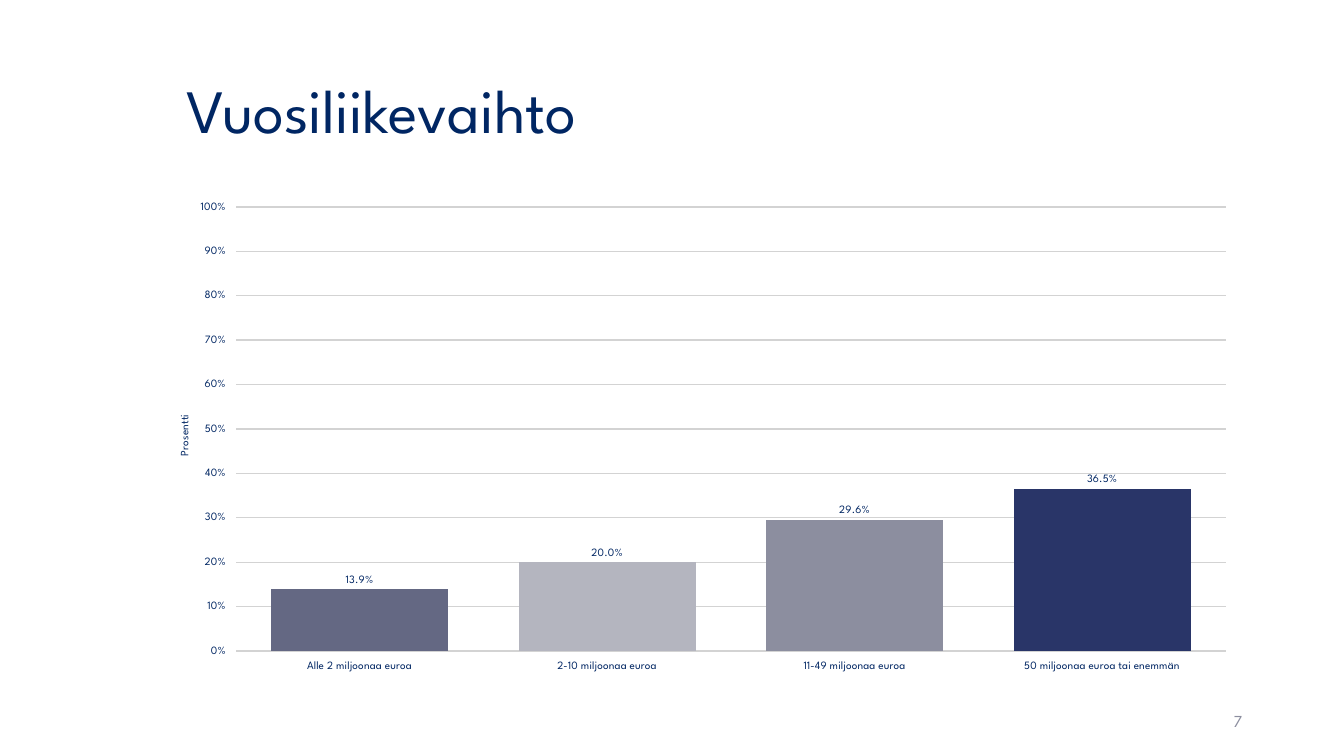
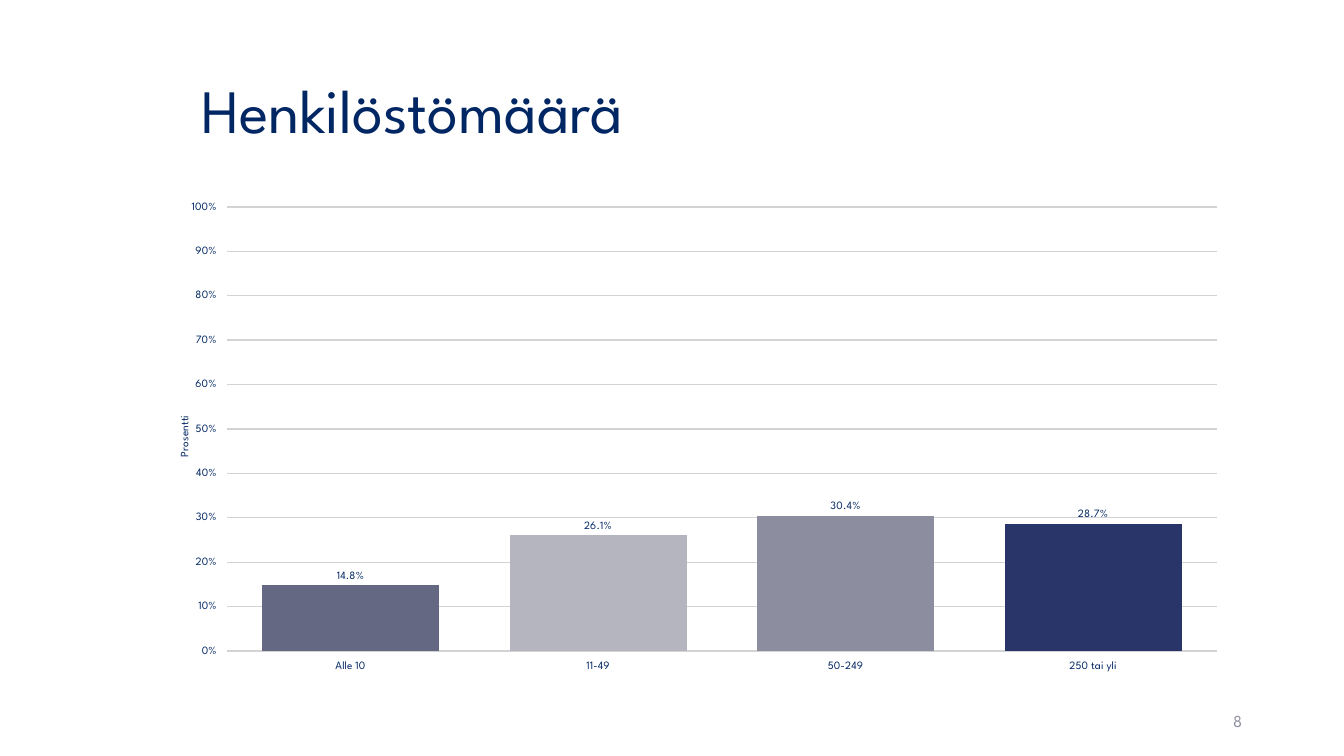
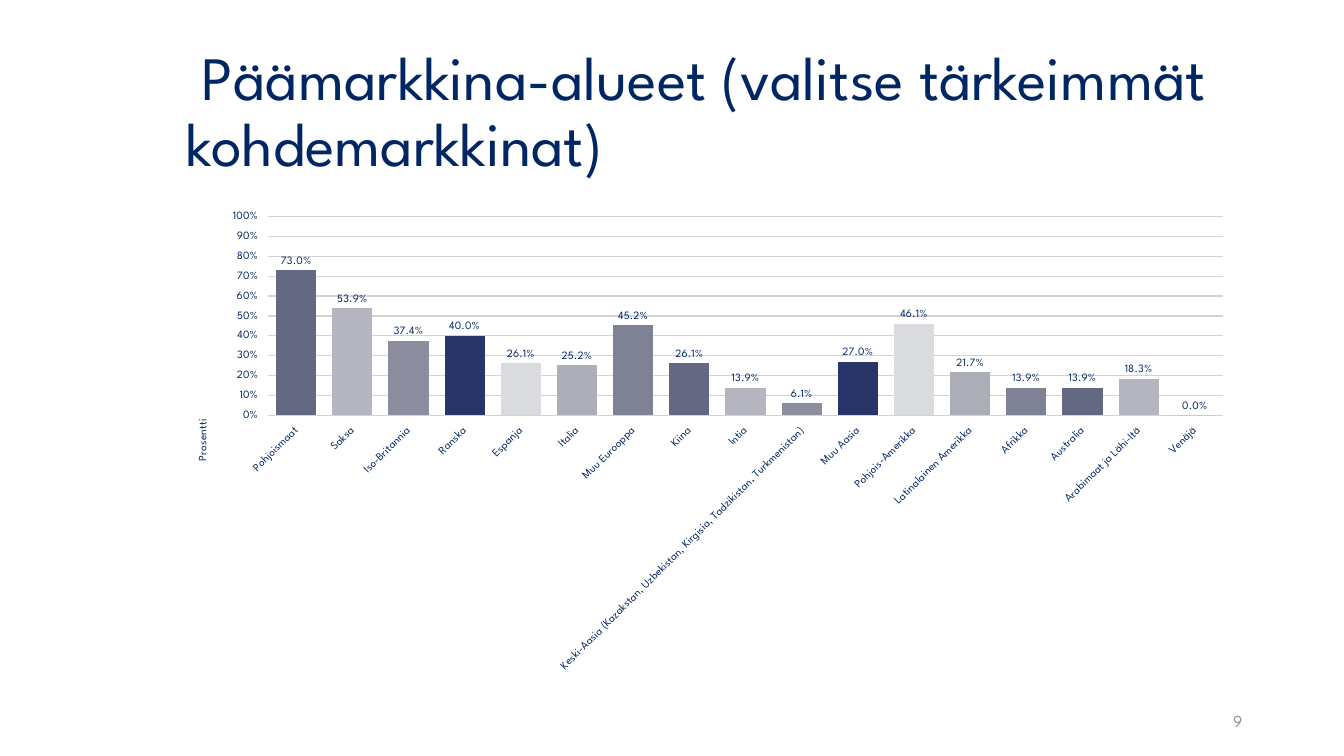
"""Build three survey slides, each with a title, a column chart and a page number."""

from dataclasses import dataclass
from itertools import cycle

from lxml.etree import SubElement
from pptx import Presentation
from pptx.chart.chart import Chart
from pptx.chart.data import CategoryChartData
from pptx.dml.color import RGBColor
from pptx.enum.chart import XL_CHART_TYPE, XL_LABEL_POSITION
from pptx.enum.text import MSO_ANCHOR, PP_ALIGN
from pptx.oxml.ns import qn
from pptx.slide import Slide
from pptx.text.text import Font
from pptx.util import Pt

PX = 9144
FACE = "League Spartan"
NAVY = "002663"
GREY = "8C8E9F"
GRID = "D3D3D3"
BARS = ["646883", "B4B5BF", GREY, "293568", "DADBDF", "ABADB7", "7F8195"]


@dataclass(frozen=True)
class Box:
    """Left, top, width and height in px."""

    x: int
    y: int
    w: int = 0
    h: int = 0

    def emu(self) -> list[int]:
        """Return the four lengths in EMU."""
        return [n * PX for n in (self.x, self.y, self.w, self.h)]


@dataclass(frozen=True)
class Page:
    """What differs from slide to slide."""

    title: str
    plot: Box
    label: Box
    data: dict[str, float]
    slant: int = 0


HEAD = Box(175, 40, 1059, 145)
GRAPH = Box(175, 200, 1059, 476)
FOOT = Box(942, 695, 300, 40)
FIRST = 7

PAGES = [
    Page(
        "Vuosiliikevaihto",
        Box(59, 5, 982, 441),
        Box(0, 209),
        {
            "Alle 2 miljoonaa euroa": 0.139,
            "2-10 miljoonaa euroa": 0.2,
            "11-49 miljoonaa euroa": 0.296,
            "50 miljoonaa euroa tai enemmän": 0.365,
        },
    ),
    Page(
        " Henkilöstömäärä",
        Box(50, 5, 982, 441),
        Box(0, 210),
        {"Alle 10": 0.148, "11-49": 0.261, "50-249": 0.304, "250 tai yli": 0.287},
    ),
    Page(
        " Päämarkkina-alueet (valitse tärkeimmät kohdemarkkinat)",
        Box(91, 15, 947, 197),
        Box(18, 214),
        {
            "Pohjoismaat": 0.73,
            "Saksa": 0.539,
            "Iso-Britannia": 0.374,
            "Ranska": 0.4,
            "Espanja": 0.261,
            "Italia": 0.252,
            "Muu Eurooppa": 0.452,
            "Kiina": 0.261,
            "Intia": 0.139,
            "Keski-Aasia (Kazakstan, Uzbekistan, Kirgisia, Tadzikistan, Turkmenistan)": 0.061,
            "Muu Aasia": 0.27,
            "Pohjois-Amerikka": 0.461,
            "Latinalainen Amerikka": 0.217,
            "Afrikka": 0.139,
            "Australia": 0.139,
            "Arabimaat ja Lähi-Itä": 0.183,
            "Venäjä": 0,
        },
        -45,
    ),
]


def tint(code: str) -> RGBColor:
    """Turn a hex string into a colour."""
    return RGBColor.from_string(code)


def style(font: Font, size: int, code: str = NAVY) -> None:
    """Set face, size and colour of a font."""
    font.name = FACE
    font.size = Pt(size)
    font.bold = False
    font.color.rgb = tint(code)


def write(slide: Slide, box: Box, text: str, size: int, code: str):
    """Add a wrapped, middle-anchored text box and return its paragraph."""
    frame = slide.shapes.add_textbox(*box.emu()).text_frame
    frame.word_wrap = True
    frame.vertical_anchor = MSO_ANCHOR.MIDDLE
    para = frame.paragraphs[0]
    para.text = text
    style(para.font, size, code)
    return para


def place(part, box: Box) -> None:
    """Give a chart part a fixed place inside the chart."""
    node = part.find(qn("c:layout"))
    if node is None:
        node = part.makeelement(qn("c:layout"), {})
        part.insert(0, node)
    spot = SubElement(node, qn("c:manualLayout"))
    pairs = [("xMode", "edge"), ("yMode", "edge")]
    pairs += [("x", box.x / GRAPH.w), ("y", box.y / GRAPH.h)]
    if box.w:
        pairs.insert(0, ("layoutTarget", "inner"))
        pairs += [("w", box.w / GRAPH.w), ("h", box.h / GRAPH.h)]
    for name, val in pairs:
        SubElement(spot, qn(f"c:{name}")).set("val", str(val))


def turn(part, angle: int) -> None:
    """Rotate the first text body of a chart part, in degrees."""
    part.find(f".//{qn('a:bodyPr')}").set("rot", str(angle * 60000))


def set_axes(chart: Chart, page: Page) -> None:
    """Style both axes, the grid and the axis title."""
    cats, vals = chart.category_axis, chart.value_axis
    for axis in (cats, vals):
        style(axis.tick_labels.font, 8)
        axis.format.line.fill.background()
    if page.slant:
        turn(cats._element, page.slant)
    vals.minimum_scale, vals.maximum_scale = 0, 1
    vals.major_unit = 0.1
    vals.tick_labels.number_format = "0%"
    vals.tick_labels.number_format_is_linked = False
    grid = vals.major_gridlines.format.line
    grid.color.rgb = tint(GRID)
    grid.width = Pt(1)
    para = vals.axis_title.text_frame.paragraphs[0]
    para.text = "Prosentti"
    style(para.font, 8)
    turn(vals._element, -90)
    place(vals.axis_title._element, page.label)


def set_bars(chart: Chart) -> None:
    """Colour the columns and label them with their values."""
    plot = chart.plots[0]
    plot.gap_width, plot.overlap = 40, -2
    plot.vary_by_categories = False
    row = plot.series[0]
    row.invert_if_negative = False
    for i, code in zip(range(len(row.values)), cycle(BARS)):
        fill = row.points[i].format.fill
        fill.solid()
        fill.fore_color.rgb = tint(code)
    tags = row.data_labels
    tags.show_value = True
    tags.number_format = "0.0%"
    tags.number_format_is_linked = False
    tags.position = XL_LABEL_POSITION.OUTSIDE_END
    style(tags.font, 8)


def draw_chart(slide: Slide, page: Page) -> None:
    """Add the column chart of a page."""
    data = CategoryChartData(number_format="0.0%")
    data.categories = list(page.data)
    data.add_series("Series 1", list(page.data.values()))
    kind = XL_CHART_TYPE.COLUMN_CLUSTERED
    chart = slide.shapes.add_chart(kind, *GRAPH.emu(), data).chart
    chart.has_title = chart.has_legend = False
    style(chart.font, 18)
    set_axes(chart, page)
    set_bars(chart)
    place(chart._chartSpace.find(f".//{qn('c:plotArea')}"), page.plot)


def main() -> None:
    """Build and save the deck."""
    deck = Presentation()
    deck.slide_width, deck.slide_height = 1333 * PX, 750 * PX
    for number, page in enumerate(PAGES, FIRST):
        slide = deck.slides.add_slide(deck.slide_layouts[6])
        write(slide, HEAD, page.title, 44, NAVY).line_spacing = 0.9
        foot = write(slide, FOOT, str(number), 12, GREY)
        foot.alignment = PP_ALIGN.RIGHT
        foot.space_after = Pt(6)
        draw_chart(slide, page)
    deck.save("out.pptx")


if __name__ == "__main__":
    main()
